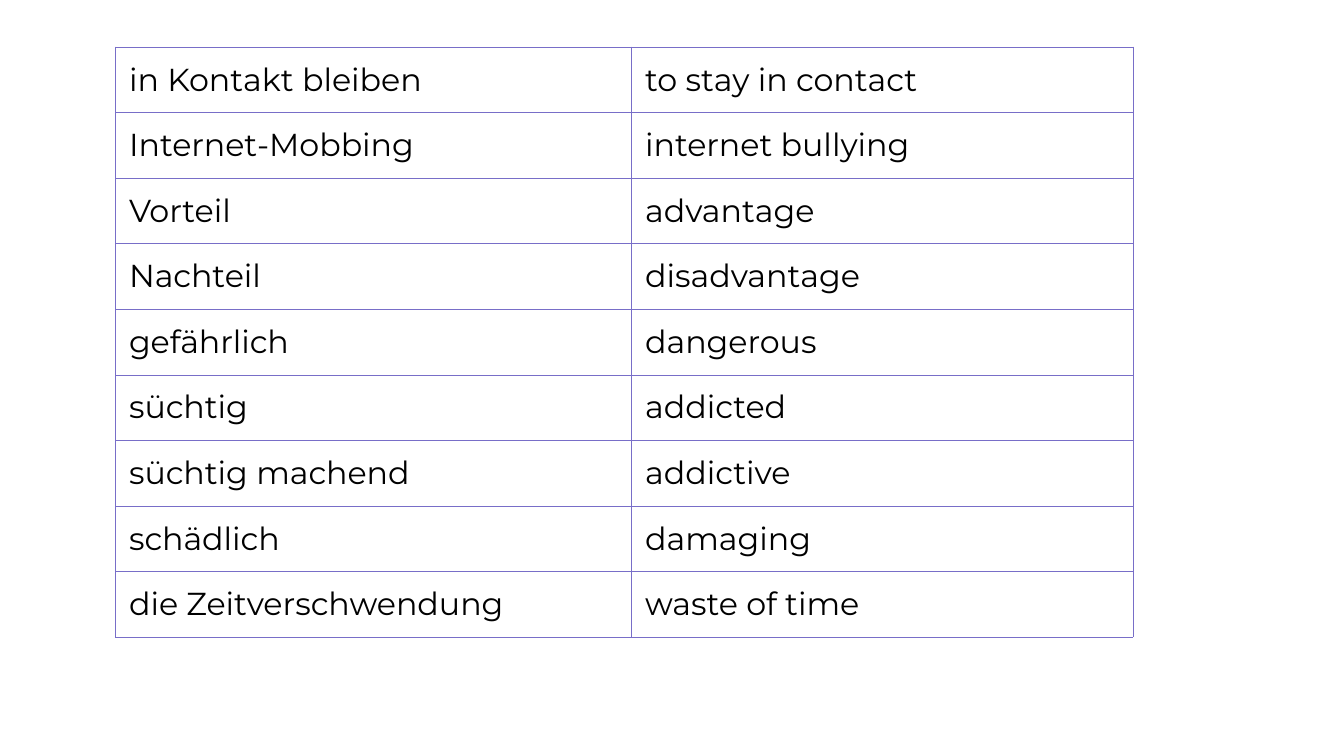
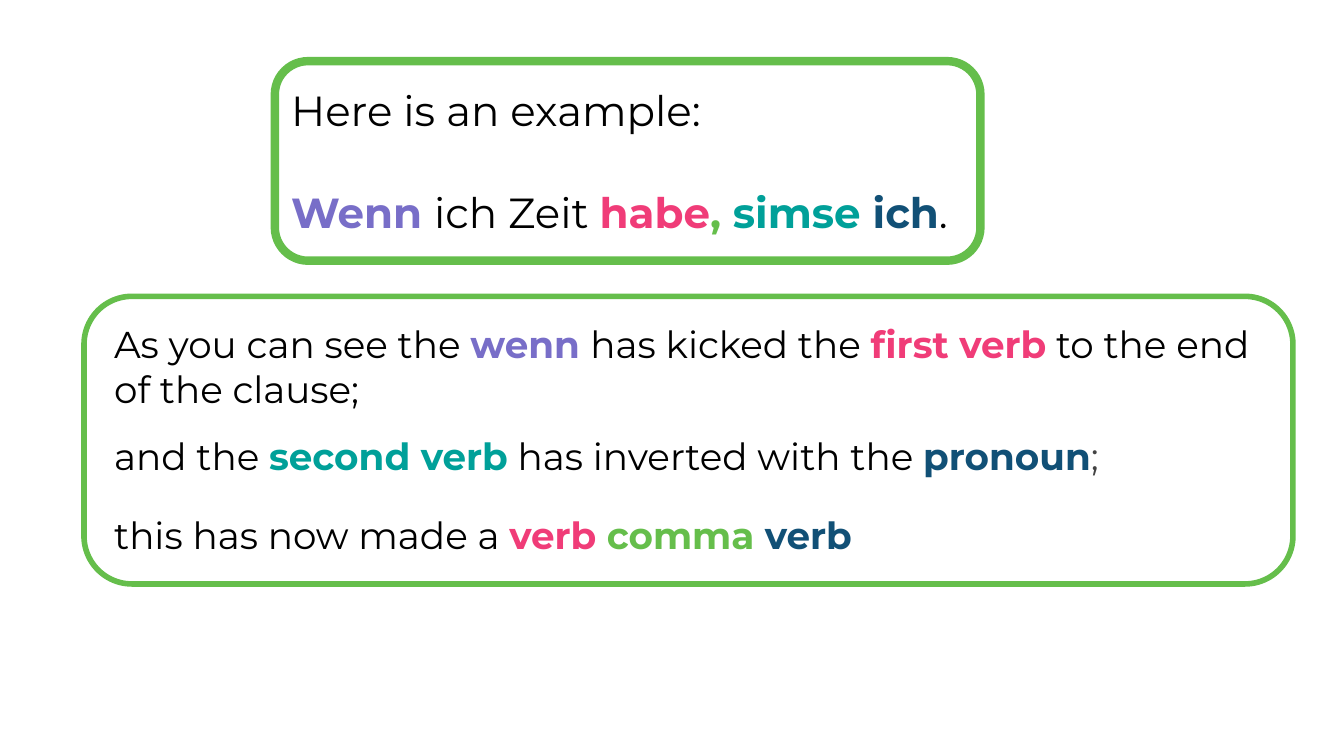
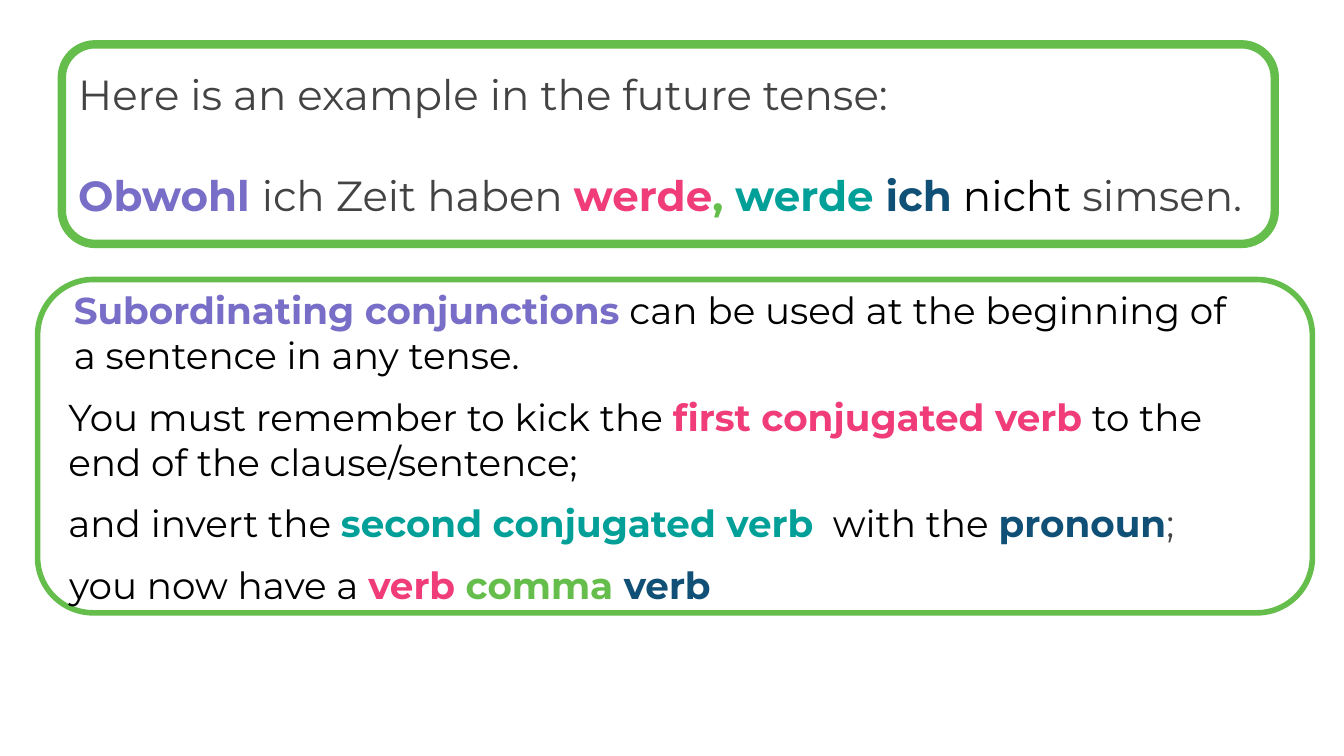
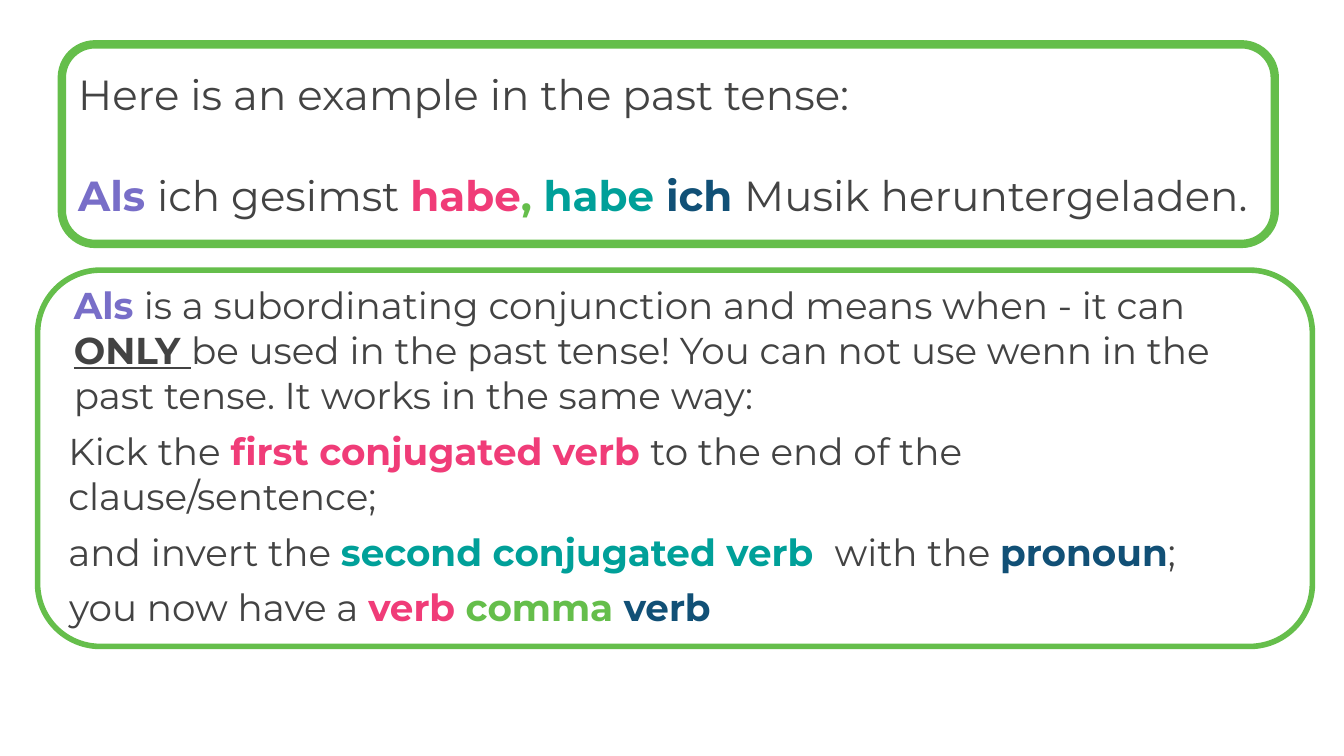
"""Build four slides on German subordinate clauses: a word list and three worked examples."""
from lxml import etree
from pptx import Presentation
from pptx.dml.color import RGBColor
from pptx.enum.shapes import MSO_SHAPE as Shape
from pptx.enum.text import MSO_ANCHOR as Anchor, PP_ALIGN as Align
from pptx.oxml.ns import qn
from pptx.util import Pt

PX = 9144
FONT = "Montserrat"
INSET = 10
CELL_INSET = 20
COLOURS = {
    "black": "000000",
    "grey": "434343",
    "stress": "434343",
    "conjunction": "786EC8",
    "first": "F03C78",
    "comma": "65BE4B",
    "second": "00A099",
    "pronoun": "115076",
}
PLAIN = ("black", "grey")


def write(holder, lines, size, inset=INSET, gap=0):
    """Write lines of (text, tone) spans into a text frame or table cell."""
    holder.margin_left = holder.margin_right = inset * PX
    holder.margin_top = holder.margin_bottom = inset * PX
    frame = getattr(holder, "text_frame", holder)
    frame.word_wrap = True
    for number, spans in enumerate(lines):
        para = frame.add_paragraph() if number else frame.paragraphs[0]
        para.alignment = Align.LEFT
        if number:
            para.space_before = Pt(gap)
        for text, tone in spans:
            span = para.add_run()
            span.text = text
            span.font.name = FONT
            span.font.size = Pt(size)
            span.font.color.rgb = RGBColor.from_string(COLOURS[tone])
            span.font.bold = tone not in PLAIN
            if tone == "stress":
                span.font.underline = True


def add_frame(page, place, weight):
    """Add a green rounded outline."""
    box = page.shapes.add_shape(Shape.ROUNDED_RECTANGLE, *[n * PX for n in place])
    box.shadow.inherit = False
    box.fill.background()
    box.line.color.rgb = RGBColor.from_string(COLOURS["comma"])
    box.line.width = Pt(weight)
    return box


deck = Presentation()
deck.slide_width, deck.slide_height = 2000 * PX, 1125 * PX
blank = deck.slide_layouts[6]

WORDS = [
    ("in Kontakt bleiben", "to stay in contact"),
    ("Internet-Mobbing", "internet bullying"),
    ("Vorteil", "advantage"),
    ("Nachteil", "disadvantage"),
    ("gefährlich", "dangerous"),
    ("süchtig", "addicted"),
    ("süchtig machend", "addictive"),
    ("schädlich", "damaging"),
    ("die Zeitverschwendung", "waste of time"),
]
COLUMNS = (768, 746)
ROW = 83

page = deck.slides.add_slide(blank)
table = page.shapes.add_table(
    len(WORDS), 2, 172 * PX, 70 * PX, sum(COLUMNS) * PX, len(WORDS) * ROW * PX
).table
table.first_row = table.horz_banding = False
for column, width in zip(table.columns, COLUMNS):
    column.width = width * PX
for row, pair in zip(table.rows, WORDS):
    row.height = ROW * PX
    for cell, word in zip(row.cells, pair):
        write(cell, [[(word, "black")]], 34, inset=CELL_INSET)
        properties = cell._tc.get_or_add_tcPr()
        for edge in ("lnL", "lnR", "lnT", "lnB"):
            line = etree.SubElement(properties, qn("a:" + edge), w=str(Pt(0.75)))
            solid = etree.SubElement(line, qn("a:solidFill"))
            etree.SubElement(solid, qn("a:srgbClr"), val=COLOURS["conjunction"])
        cell.fill.background()

VERB_COMMA_VERB = [("verb ", "first"), ("comma ", "comma"), ("verb", "pronoun")]
WIDE_EXAMPLE = (92, 66, 1805, 297)
EXPLANATIONS = [
    {
        "example_at": (409, 91, 1050, 297),
        "example": [
            [("Here is an example:", "black")],
            [("Wenn ", "conjunction"), ("ich Zeit ", "black"), ("habe", "first"),
             (", ", "comma"), ("simse ", "second"), ("ich", "pronoun"), (".", "black")],
        ],
        "rules_at": (125, 441, 1799, 428),
        "rules": [
            (160, 468, 1721, [
                ("As you can see the ", "black"), ("wenn ", "conjunction"),
                ("has kicked the ", "black"), ("first verb", "first"),
                (" to the end of the clause;", "black")]),
            (160, 635, 1721, [
                ("and the ", "black"), ("second verb", "second"),
                (" has inverted with the ", "black"), ("pronoun", "pronoun"), (";", "grey")]),
            (160, 752, 1721, [("this has now made a ", "black")] + VERB_COMMA_VERB),
        ],
    },
    {
        "example_at": WIDE_EXAMPLE,
        "example": [
            [("Here is an example in the future tense:", "grey")],
            [("Obwohl ", "conjunction"), ("ich Zeit haben ", "grey"), ("werde", "first"),
             (", ", "comma"), ("werde ", "second"), ("ich", "pronoun"),
             (" nicht ", "black"), ("simsen.", "grey")],
        ],
        "rules_at": (56, 416, 1897, 496),
        "rules": [
            (100, 418, 1780, [
                ("Subordinating conjunctions", "conjunction"),
                (" can be used at the beginning of a sentence in any tense.", "black")]),
            (92, 577, 1755, [
                ("You must remember to kick the ", "black"), ("first conjugated verb", "first"),
                (" to the end of the clause/sentence;", "black")]),
            (92, 735, 1861, [
                ("and invert the ", "black"), ("second conjugated verb", "second"),
                ("  with the ", "black"), ("pronoun", "pronoun"), (";", "grey")]),
            (93, 827, 1721, [("you now have a ", "black")] + VERB_COMMA_VERB),
        ],
    },
    {
        "example_at": WIDE_EXAMPLE,
        "example": [
            [("Here is an example in the past tense:", "grey")],
            [("Als ", "conjunction"), ("ich gesimst ", "grey"), ("habe", "first"),
             (", ", "comma"), ("habe ", "second"), ("ich ", "pronoun"),
             ("Musik heruntergeladen.", "grey")],
        ],
        "rules_at": (56, 402, 1897, 560),
        "rules": [
            (100, 410, 1780, [
                ("Als ", "conjunction"),
                ("is a subordinating conjunction and means when - it can ", "grey"),
                ("ONLY ", "stress"),
                ("be used in the past tense! You can not use wenn in the past tense. "
                 "It works in the same way:", "grey")]),
            (92, 627, 1755, [
                ("Kick the ", "grey"), ("first conjugated verb ", "first"),
                ("to the end of the clause/sentence;", "grey")]),
            (92, 777, 1861, [
                ("and invert the ", "grey"), ("second conjugated verb  ", "second"),
                ("with the ", "grey"), ("pronoun", "pronoun"), (";", "grey")]),
            (93, 860, 1721, [("you now have a ", "grey")] + VERB_COMMA_VERB),
        ],
    },
]

for content in EXPLANATIONS:
    page = deck.slides.add_slide(blank)
    example = add_frame(page, content["example_at"], 9)
    example.text_frame.vertical_anchor = Anchor.MIDDLE
    write(example.text_frame, content["example"], 45, gap=55)
    add_frame(page, content["rules_at"], 6)
    for left, top, width, spans in content["rules"]:
        box = page.shapes.add_textbox(left * PX, top * PX, width * PX, 160 * PX)
        write(box.text_frame, [spans], 40)

deck.save("out.pptx")
